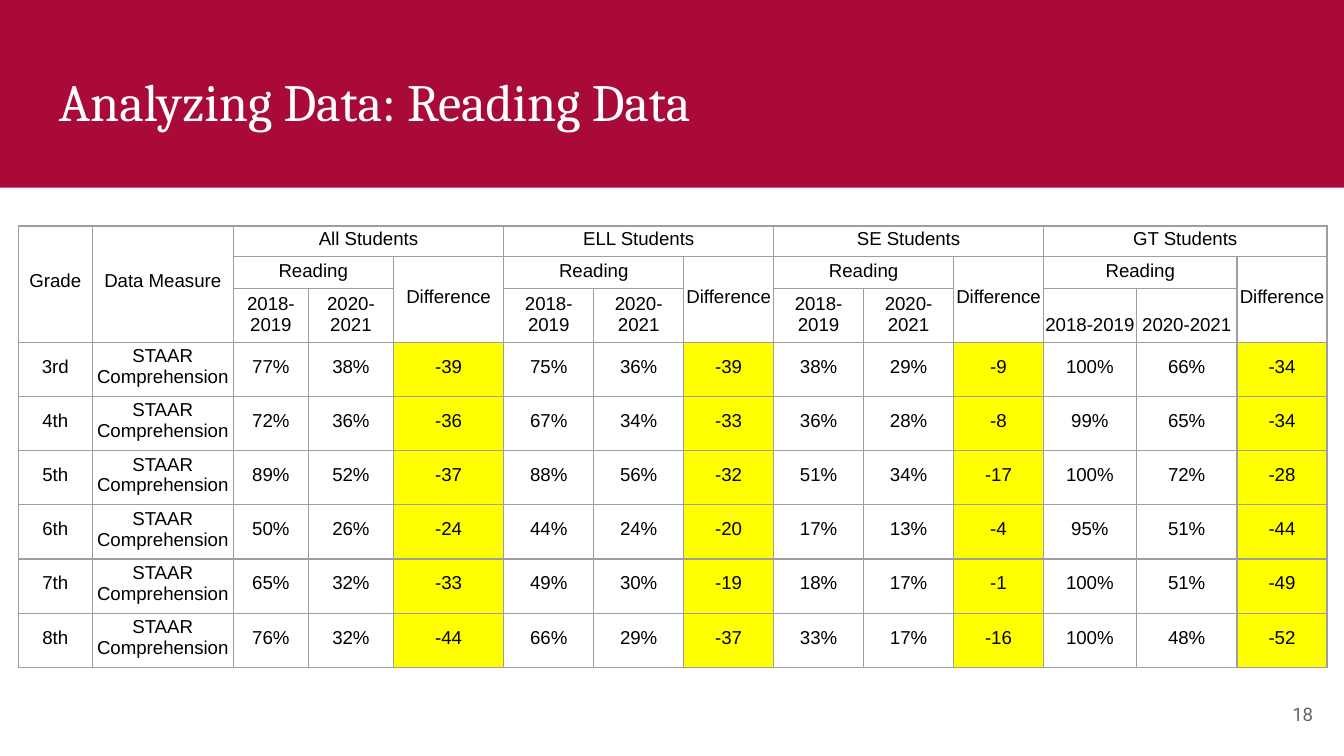
from dataclasses import dataclass

from lxml.etree import SubElement
from pptx import Presentation
from pptx.dml.color import RGBColor
from pptx.enum.shapes import MSO_SHAPE
from pptx.enum.text import MSO_ANCHOR, PP_ALIGN
from pptx.oxml.ns import qn
from pptx.util import Pt

CRIMSON = "AA0A38"
WHITE = "FFFFFF"
BLACK = "000000"
YELLOW = "FFFF00"
BORDER_GRAY = "9E9E9E"
NUMBER_GRAY = "666666"

GRADES = ("3rd", "4th", "5th", "6th", "7th", "8th")
YEARS = ("2018-2019", "2020-2021")
HEADER_ROWS = 3
COLUMN_WIDTHS = (39.6, 75.5, 40.4, 45.4, 59.2, *[48.2] * 6, 49.7, 54, 48.2)
ROW_HEIGHTS = (16.2, 17.1, 28.9, *[29.05] * len(GRADES))


@dataclass(frozen=True)
class StudentGroup:
    name: str
    before: tuple[int, ...]
    after: tuple[int, ...]


GROUPS = (
    StudentGroup("All Students", (77, 72, 89, 50, 65, 76), (38, 36, 52, 26, 32, 32)),
    StudentGroup("ELL Students", (75, 67, 88, 44, 49, 66), (36, 34, 56, 24, 30, 29)),
    StudentGroup("SE Students", (38, 36, 51, 17, 18, 33), (29, 28, 34, 13, 17, 17)),
    StudentGroup("GT Students", (100, 99, 100, 95, 100, 100), (66, 65, 72, 51, 51, 48)),
)


def colour(code: str) -> RGBColor:
    return RGBColor.from_string(code)


def write_text(frame, text: str, *, size: float = 10, font: str = "Arial",
               ink: str = BLACK, align=PP_ALIGN.CENTER) -> None:
    para = frame.paragraphs[0]
    para.alignment = align
    span = para.add_run()
    span.text = text
    span.font.size = Pt(size)
    span.font.name = font
    span.font.color.rgb = colour(ink)


def add_text_box(page, left: float, top: float, width: float, height: float,
                 text: str, anchor, **text_format) -> None:
    box = page.shapes.add_textbox(Pt(left), Pt(top), Pt(width), Pt(height))
    frame = box.text_frame
    frame.word_wrap = True
    frame.vertical_anchor = anchor
    frame.margin_left = frame.margin_right = Pt(7.2)
    frame.margin_top = frame.margin_bottom = Pt(7.2)
    write_text(frame, text, **text_format)


def add_borders(cell) -> None:
    properties = cell._tc.get_or_add_tcPr()
    for side in ("a:lnL", "a:lnR", "a:lnT", "a:lnB"):
        line = SubElement(properties, qn(side), w=str(Pt(0.75)))
        fill = SubElement(line, qn("a:solidFill"))
        SubElement(fill, qn("a:srgbClr"), val=BORDER_GRAY)


def fill_cell(table, row: int, column: int, text: str, *, rows: int = 1,
              columns: int = 1, anchor=MSO_ANCHOR.MIDDLE, fill: str = "") -> None:
    cell = table.cell(row, column)
    if rows > 1 or columns > 1:
        cell.merge(table.cell(row + rows - 1, column + columns - 1))
    cell.vertical_anchor = anchor
    write_text(cell.text_frame, text)
    if fill:
        cell.fill.solid()
        cell.fill.fore_color.rgb = colour(fill)


def add_group(table, column: int, group: StudentGroup) -> None:
    bottom = MSO_ANCHOR.BOTTOM
    fill_cell(table, 0, column, group.name, columns=3, anchor=bottom)
    fill_cell(table, 1, column, "Reading", columns=2, anchor=bottom)
    fill_cell(table, 1, column + 2, "Difference", rows=2)
    for offset, year in enumerate(YEARS):
        fill_cell(table, 2, column + offset, year, anchor=bottom)
    for row, (before, after) in enumerate(zip(group.before, group.after), HEADER_ROWS):
        fill_cell(table, row, column, f"{before}%")
        fill_cell(table, row, column + 1, f"{after}%")
        fill_cell(table, row, column + 2, str(after - before), fill=YELLOW)


def add_reading_table(page) -> None:
    table = page.shapes.add_table(
        len(ROW_HEIGHTS), len(COLUMN_WIDTHS), Pt(9.8), Pt(121.1),
        Pt(sum(COLUMN_WIDTHS)), Pt(sum(ROW_HEIGHTS))).table
    table.first_row = False
    table.horz_banding = False
    for column, width in zip(table.columns, COLUMN_WIDTHS):
        column.width = Pt(width)
    for row, height in zip(table.rows, ROW_HEIGHTS):
        row.height = Pt(height)
    for cell in table.iter_cells():
        cell.margin_left = cell.margin_right = cell.margin_top = Pt(0.7)
        cell.margin_bottom = Pt(3.6)
        add_borders(cell)
        cell.fill.background()
    for column, heading in enumerate(("Grade", "Data Measure")):
        fill_cell(table, 0, column, heading, rows=HEADER_ROWS)
    for row, grade in enumerate(GRADES, HEADER_ROWS):
        fill_cell(table, row, 0, grade)
        fill_cell(table, row, 1, "STAAR Comprehension")
    for index, group in enumerate(GROUPS):
        add_group(table, 2 + 3 * index, group)


def main() -> None:
    deck = Presentation()
    deck.slide_width, deck.slide_height = Pt(720), Pt(405)
    page = deck.slides.add_slide(deck.slide_layouts[6])
    banner = page.shapes.add_shape(MSO_SHAPE.RECTANGLE, Pt(0), Pt(0), Pt(720), Pt(100.5))
    banner.shadow.inherit = False
    banner.fill.solid()
    banner.fill.fore_color.rgb = colour(CRIMSON)
    banner.line.fill.background()
    add_text_box(page, 24.5, 28.8, 671, 49, "Analyzing Data: Reading Data",
                 MSO_ANCHOR.BOTTOM, size=28, font="Cambria", ink=WHITE,
                 align=PP_ALIGN.LEFT)
    add_reading_table(page)
    add_text_box(page, 667.4, 367.2, 43.2, 31, "18", MSO_ANCHOR.MIDDLE,
                 font="Roboto", ink=NUMBER_GRAY, align=PP_ALIGN.RIGHT)
    deck.save("out.pptx")


if __name__ == "__main__":
    main()
